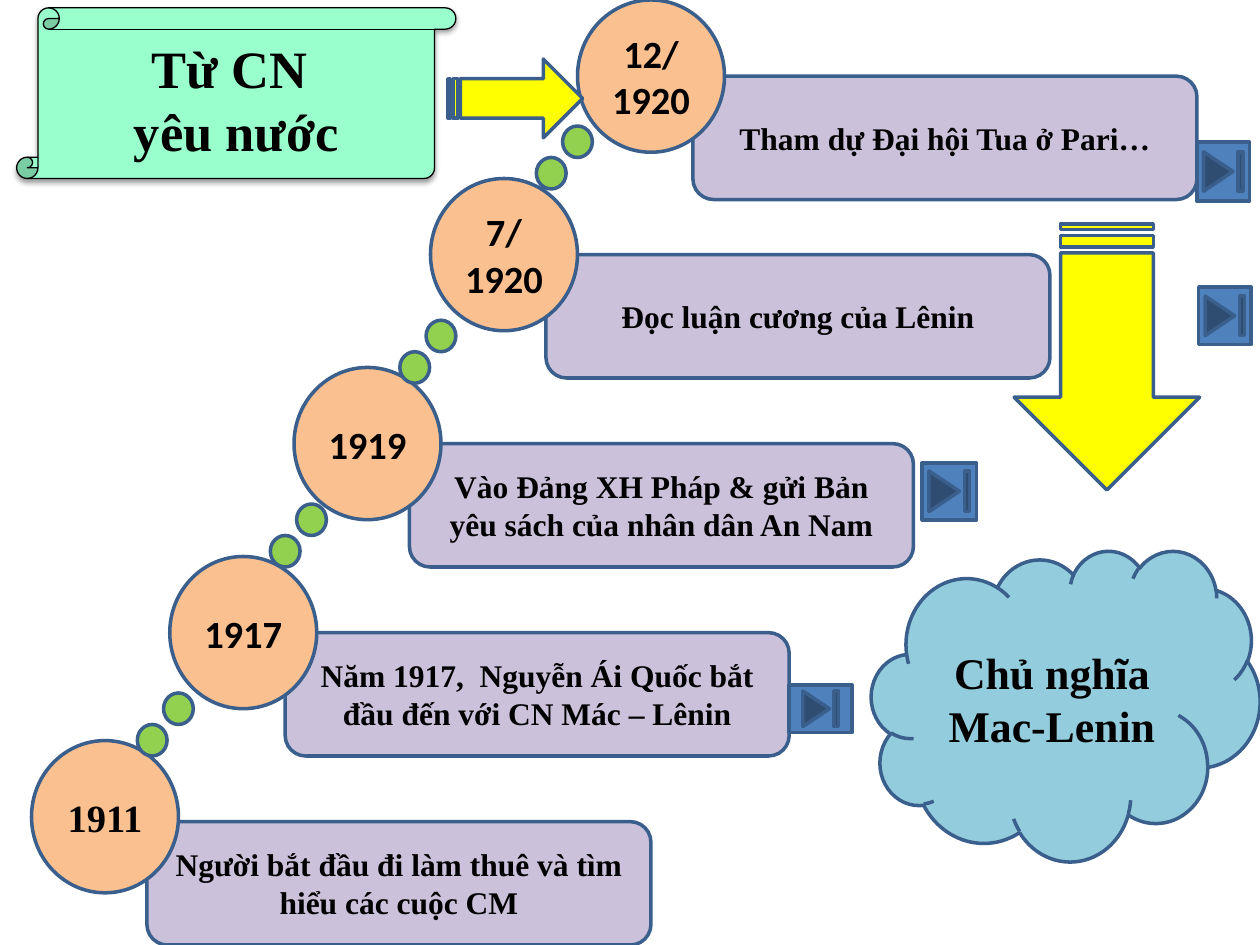
from lxml.etree import SubElement
from pptx import Presentation
from pptx.dml.color import RGBColor
from pptx.enum.shapes import MSO_SHAPE as SHAPE
from pptx.enum.text import MSO_ANCHOR, PP_ALIGN
from pptx.oxml.ns import qn
from pptx.util import Pt

BLACK = RGBColor(0x00, 0x00, 0x00)
OUTLINE = RGBColor(0x3A, 0x5F, 0x8C)
LILAC = RGBColor(0xCC, 0xC1, 0xDA)
PEACH = RGBColor(0xFA, 0xC0, 0x90)
GREEN = RGBColor(0x92, 0xD0, 0x50)
MINT = RGBColor(0x99, 0xFF, 0xCC)
YELLOW = RGBColor(0xFF, 0xFF, 0x00)
AQUA = RGBColor(0x93, 0xCD, 0xDD)
BLUE = RGBColor(0x4F, 0x81, 0xBD)
SERIF, SANS = "Times New Roman", "Calibri"

# date lines, date font, event, circle left, circle top, box top
MILESTONES = [
    (["1911"], SERIF, "Người bắt đầu đi làm thuê và tìm hiểu các cuộc CM", 18, 423.2, 469.5),
    (["1917"], SANS, "Năm 1917,  Nguyễn Ái Quốc bắt đầu đến với CN Mác – Lênin", 97, 318, 361.5),
    (["1919"], SANS, "Vào Đảng XH Pháp & gửi Bản yêu sách của nhân dân An Nam", 168, 210, 253.5),
    (["7/", "1920"], SANS, "Đọc luận cương của Lênin", 246, 102, 145.5),
    (["12/ 1920"], SANS, "Tham dự Đại hội Tua ở Pari…", 330, 0, 43.5),
]
CIRCLE_W, CIRCLE_H = 84, 87
BOX_DX, BOX_W, BOX_H = 66, 288, 70.5

UPPER_DOTS = [(93.5, 396), (169.5, 288), (243.5, 183), (321.5, 72)]
DOT_W, DOT_H, DOT_DX, DOT_DY = 17, 18, -15, 18

# left, top, width, height, rotation
ARROWS = [(256, 33.75, 77, 45, 0), (556.5, 151, 152, 106, 90)]
BUTTONS = [(451, 391.5, 36, 27), (527, 264.5, 31, 32.5),
           (685, 164, 30, 33), (684, 81, 30, 34)]


def add_shape(s, kind, box, fill, line=OUTLINE, line_w=2):
    sp = s.shapes.add_shape(kind, *(Pt(v) for v in box))
    sp.shadow.inherit = False
    sp.fill.solid()
    sp.fill.fore_color.rgb = fill
    sp.line.color.rgb = line
    sp.line.width = Pt(line_w)
    return sp


def add_text(sp, lines, size, font=SERIF):
    tf = sp.text_frame
    tf.word_wrap = True
    tf.vertical_anchor = MSO_ANCHOR.MIDDLE
    for i, line in enumerate(lines):
        p = tf.add_paragraph() if i else tf.paragraphs[0]
        p.alignment = PP_ALIGN.CENTER
        r = p.add_run()
        r.text = line
        r.font.name = font
        r.font.size = Pt(size)
        r.font.bold = True
        r.font.color.rgb = BLACK


def add_shadow(sp, blur, distance, alpha):
    """Drop a soft black shadow straight down."""
    effects = sp._element.spPr.find(qn("a:effectLst"))
    shadow = SubElement(effects, qn("a:outerShdw"), blurRad=str(Pt(blur)),
                        dist=str(Pt(distance)), dir="5400000", rotWithShape="0")
    color = SubElement(shadow, qn("a:srgbClr"), val=str(BLACK))
    SubElement(color, qn("a:alpha"), val=str(alpha * 1000))


def main():
    prs = Presentation()
    prs.slide_width, prs.slide_height = Pt(720), Pt(540)
    s = prs.slides.add_slide(prs.slide_layouts[6])

    for date, font, event, x, y, box_y in MILESTONES:
        box = add_shape(s, SHAPE.ROUNDED_RECTANGLE, (x + BOX_DX, box_y, BOX_W, BOX_H), LILAC)
        add_text(box, [event], 18)
        circle = add_shape(s, SHAPE.OVAL, (x, y, CIRCLE_W, CIRCLE_H), PEACH)
        add_text(circle, date, 22, font)

    for x, y in UPPER_DOTS:
        for step in range(2):
            add_shape(s, SHAPE.OVAL, (x + step * DOT_DX, y + step * DOT_DY, DOT_W, DOT_H), GREEN)

    scroll = add_shape(s, SHAPE.VERTICAL_SCROLL, (9.5, 4.5, 251, 97.5), MINT, BLACK, 0.75)
    add_shadow(scroll, 3.1, 1.6, 38)
    add_text(scroll, ["Từ CN ", "yêu nước"], 30)

    for *box, rotation in ARROWS:
        add_shape(s, SHAPE.STRIPED_RIGHT_ARROW, box, YELLOW).rotation = rotation

    cloud = add_shape(s, SHAPE.CLOUD, (498, 314.5, 222, 177.5), AQUA)
    add_text(cloud, ["Chủ nghĩa Mac-Lenin"], 25)

    for box in BUTTONS:
        add_shape(s, SHAPE.ACTION_BUTTON_END, box, BLUE)

    prs.save("out.pptx")


if __name__ == "__main__":
    main()
